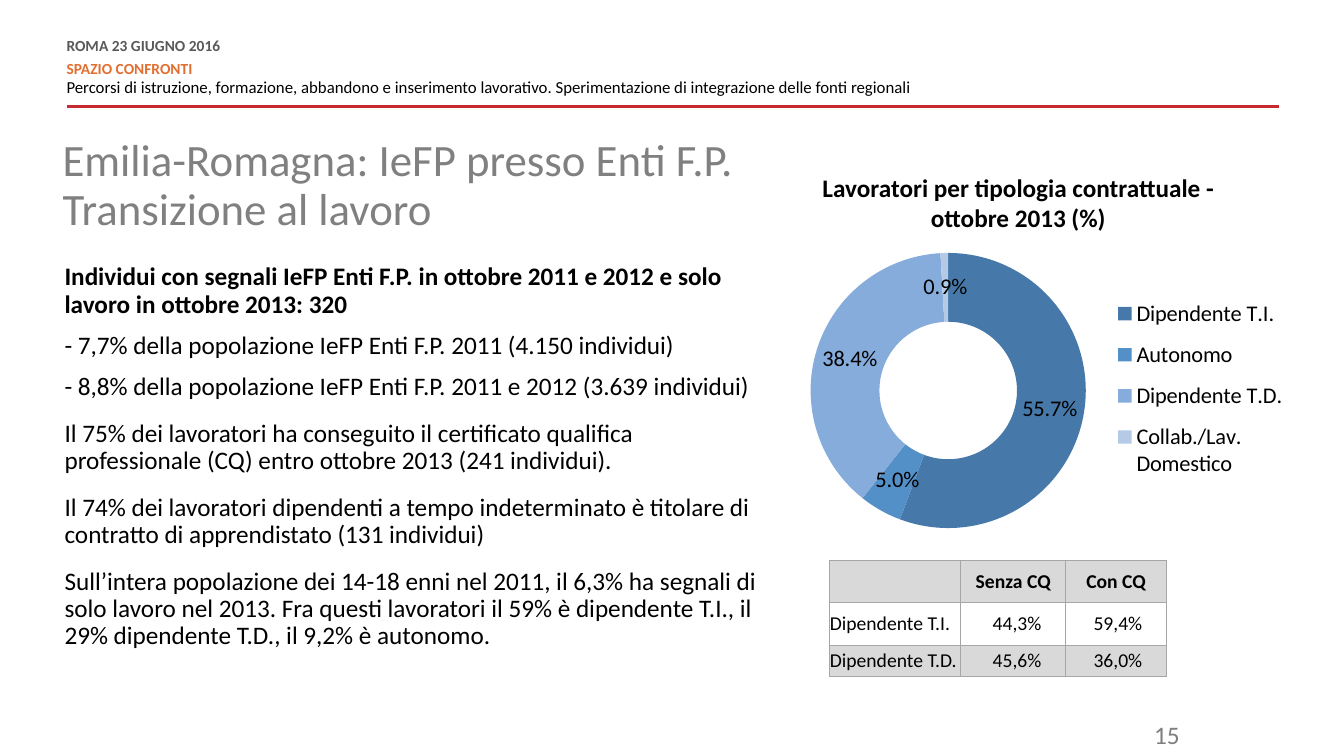
from dataclasses import dataclass

from lxml import etree
from pptx import Presentation
from pptx import util as u
from pptx.chart import data as cd
from pptx.dml.color import RGBColor
from pptx.enum import chart as ch, shapes, text
from pptx.oxml import ns

PX = 9144
ALIGN = text.PP_ALIGN


@dataclass(frozen=True)
class Theme:
    font: str = "Calibri"
    ink: str = "000000"
    heading: str = "808080"
    number: str = "7F7F7F"
    date: str = "595959"
    accent: str = "E26F31"
    rule: str = "C72A31"
    band: str = "D9D9D9"
    paper: str = "FFFFFF"
    border: str = "A6A6A6"
    slices: tuple = ("4679A9", "5490C8", "85ACDB", "B5CAE7")
    title: int = 32
    body: int = 18
    chart: int = 16
    table: int = 14
    note: int = 12
    small: int = 11


T = Theme()


def rgb(color):
    return RGBColor.from_string(color)


def px(*lengths):
    return [u.Emu(n * PX) for n in lengths]


def sub(parent, tag, **attrs):
    return etree.SubElement(parent, ns.qn(tag), attrs)


def style(font, size, color=T.ink, bold=False):
    font.name, font.size, font.bold = T.font, u.Pt(size), bold
    font.color.rgb = rgb(color)


def add_run(p, words, size, color=T.ink, bold=False):
    r = p.add_run()
    r.text = words
    style(r.font, size, color, bold)


def bare(tf, anchor=text.MSO_ANCHOR.TOP):
    tf.word_wrap = True
    tf.auto_size = text.MSO_AUTO_SIZE.NONE
    tf.vertical_anchor = anchor
    tf.margin_left = tf.margin_right = tf.margin_top = tf.margin_bottom = 0


def add_box(s, box):
    tf = s.shapes.add_textbox(*px(*box)).text_frame
    bare(tf)
    return tf


def next_paragraph(tf, i):
    return tf.add_paragraph() if i else tf.paragraphs[0]


def add_header(s, box):
    x, y, w, h = box
    rule = s.shapes.add_connector(
        shapes.MSO_CONNECTOR.STRAIGHT, *px(x + w, y + h, x, y + h))
    rule.line.color.rgb = rgb(T.rule)
    rule.line.width = u.Pt(2)
    sub(rule._element.spPr, "a:effectLst")
    lines = (
        ("ROMA 23 GIUGNO 2016", T.small, T.date, True, 0, 6),
        ("SPAZIO CONFRONTI", T.small, T.accent, True, 0, 0),
        ("Percorsi di istruzione, formazione, abbandono e inserimento lavorativo. "
         "Sperimentazione di integrazione delle fonti regionali",
         T.note, T.ink, False, 3, 6),
    )
    tf = add_box(s, (x, y, 848, 59))
    for i, (words, size, color, bold, before, after) in enumerate(lines):
        p = next_paragraph(tf, i)
        p.line_spacing = u.Pt(10.8)
        p.space_before, p.space_after = u.Pt(before), u.Pt(after)
        add_run(p, words, size, color, bold)


def add_title(s, box):
    sp = s.shapes.title
    sp.left, sp.top, sp.width, sp.height = px(*box)
    bare(sp.text_frame)
    p = sp.text_frame.paragraphs[0]
    p.alignment, p.line_spacing = ALIGN.LEFT, 0.9
    add_run(p, "Emilia-Romagna: IeFP presso Enti F.P.", T.title, T.heading)
    p.add_line_break()
    add_run(p, "Transizione al lavoro", T.title, T.heading)


def add_body(s, box):
    items = (
        ("Individui con segnali IeFP Enti F.P. in ottobre 2011 e 2012 e solo "
         "lavoro in ottobre 2013: 320", 0),
        ("- 7,7% della popolazione IeFP Enti F.P. 2011 (4.150 individui)", 10),
        ("- 8,8% della popolazione IeFP Enti F.P. 2011 e 2012 (3.639 individui)", 10),
        ("Il 75% dei lavoratori ha conseguito il certificato qualifica "
         "professionale (CQ) entro ottobre 2013 (241 individui).", 14),
        ("Il 74% dei lavoratori dipendenti a tempo indeterminato è titolare di "
         "contratto di apprendistato (131 individui)", 14),
        ("Sull’intera popolazione dei 14-18 enni nel 2011, il 6,3% ha segnali di "
         "solo lavoro nel 2013. Fra questi lavoratori il 59% è dipendente T.I., il "
         "29% dipendente T.D., il 9,2% è autonomo.", 14),
    )
    tf = add_box(s, box)
    for i, (words, before) in enumerate(items):
        p = next_paragraph(tf, i)
        p.line_spacing, p.space_before = 0.9, u.Pt(before)
        add_run(p, words, T.body, bold=i == 0)


def set_layout(parent, position, inner=False):
    for old in parent.findall(ns.qn("c:layout")):
        parent.remove(old)
    layout = etree.Element(ns.qn("c:layout"))
    manual = sub(layout, "c:manualLayout")
    if inner:
        sub(manual, "c:layoutTarget", val="inner")
    for name in ("xMode", "yMode"):
        sub(manual, f"c:{name}", val="edge")
    for name, value in zip("xywh", position):
        sub(manual, f"c:{name}", val=str(value))
    parent.insert(0 if inner else 1, layout)


def add_contract_chart(s, box):
    x, y, w, h = box
    p = add_box(s, (x + 29, y, 396, 61)).paragraphs[0]
    p.alignment = ALIGN.CENTER
    add_run(p, "Lavoratori per tipologia contrattuale - ottobre 2013 (%)",
            T.body, bold=True)

    data = cd.CategoryChartData(number_format="0.0%")
    data.categories = ["Dipendente T.I.", "Autonomo", "Dipendente T.D.",
                       "Collab./Lav. Domestico"]
    data.add_series("Lavoratori", (0.557, 0.05, 0.384, 0.009))
    chart = s.shapes.add_chart(
        ch.XL_CHART_TYPE.DOUGHNUT, *px(x, y + 65, w, h - 65), data).chart
    style(chart.font, T.chart)
    chart.has_title = False
    chart.has_legend = True
    chart.legend.position = ch.XL_LEGEND_POSITION.RIGHT
    chart.legend.include_in_layout = False
    plot = chart.plots[0]
    plot.vary_by_categories = True
    plot.has_data_labels = True
    labels = plot.data_labels
    labels.show_value, labels.show_percentage = True, False
    labels.number_format, labels.number_format_is_linked = "0.0%", False
    style(labels.font, T.chart)
    for i, color in enumerate(T.slices):
        fmt = plot.series[0].points[i].format
        fmt.fill.solid()
        fmt.fill.fore_color.rgb = rgb(color)
        fmt.line.fill.background()
    set_layout(chart._chartSpace.chart.plotArea, (0.04, 0.05, 0.55, 0.91), inner=True)
    set_layout(chart.legend._element, (0.64, 0.16, 0.35, 0.68))


def add_borders(cell):
    tcPr = cell._tc.get_or_add_tcPr()
    for side in "LRTB":
        ln = sub(tcPr, f"a:ln{side}", w=str(u.Pt(0.75)))
        sub(sub(ln, "a:solidFill"), "a:srgbClr", val=T.border)


def add_certificate_table(s, box):
    rows = (
        ("", "Senza CQ", "Con CQ"),
        ("Dipendente T.I.", "44,3%", "59,4%"),
        ("Dipendente T.D.", "45,6%", "36,0%"),
    )
    table = s.shapes.add_table(3, 3, *px(*box)).table
    for col, width in zip(table.columns, px(130, 104, 100)):
        col.width = width
    for row, height in zip(table.rows, px(42, 42, 31)):
        row.height = height
    for i, row in enumerate(rows):
        for j, words in enumerate(row):
            cell = table.cell(i, j)
            add_borders(cell)
            cell.fill.solid()
            cell.fill.fore_color.rgb = rgb(T.paper if i == 1 else T.band)
            cell.vertical_anchor = text.MSO_ANCHOR.MIDDLE
            cell.margin_left = cell.margin_top = cell.margin_bottom = 0
            cell.margin_right = px(24 if i and j else 0)[0]
            if words:
                p = cell.text_frame.paragraphs[0]
                p.alignment = (ALIGN.CENTER if i == 0
                               else ALIGN.RIGHT if j else ALIGN.LEFT)
                add_run(p, words, T.table, bold=i == 0)


def add_page_number(s, box):
    p = add_box(s, box).paragraphs[0]
    p.alignment = ALIGN.RIGHT
    add_run(p, "15", T.body, T.number)


def main():
    prs = Presentation()
    prs.slide_width, prs.slide_height = px(1333, 750)
    s = prs.slides.add_slide(prs.slide_layouts[5])
    add_header(s, (66, 39, 1203, 67))
    add_title(s, (62, 137, 673, 102))
    add_body(s, (64, 262, 689, 388))
    add_contract_chart(s, (783, 171, 500, 365))
    add_certificate_table(s, (823, 556, 334, 115))
    add_page_number(s, (890, 714, 280, 30))
    prs.save("out.pptx")


if __name__ == "__main__":
    main()
